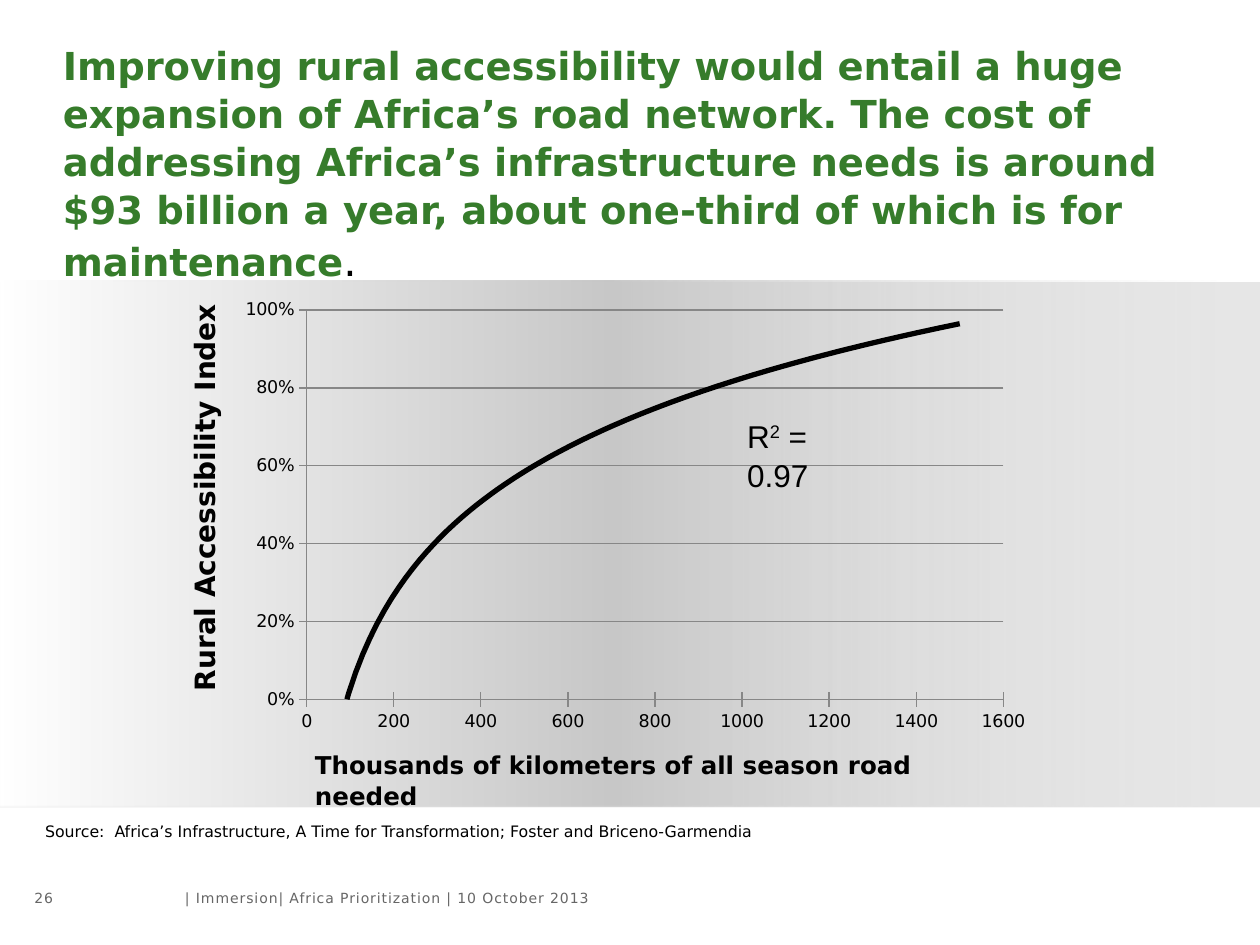
from collections import namedtuple
from dataclasses import dataclass

from lxml import etree
from pptx import Presentation
from pptx.chart.data import XyChartData
from pptx.dml.color import RGBColor
from pptx.enum.chart import XL_CHART_TYPE as ChartType
from pptx.enum.chart import XL_MARKER_STYLE as Marker
from pptx.enum.chart import XL_TICK_MARK as Tick
from pptx.enum.shapes import MSO_SHAPE as Preset
from pptx.enum.text import MSO_ANCHOR as Anchor
from pptx.enum.text import PP_ALIGN as Align
from pptx.oxml import parse_xml
from pptx.oxml.ns import nsdecls, qn
from pptx.util import Cm, Pt

Box = namedtuple("Box", "left top width height")


@dataclass(frozen=True)
class Theme:
    """Colours, fonts and type sizes of the slide."""
    green: str = "367C2B"
    black: str = "000000"
    grey: str = "666666"
    axis: str = "878787"
    band: str = "E6E6E6"
    fade: tuple = (("FFFFFF", 0, 100), ("C7C7C7", 50, 100), ("E4E4E4", 100, 0))
    font: str = "DejaVu Sans"
    formula_font: str = "Arial"
    title: int = 22
    stop: int = 24
    formula: int = 18
    y_title: int = 16
    x_title: int = 14
    ticks: int = 10
    source: int = 9
    footer: int = 8
    leading: float = 1.04


THEME = Theme()


def rgb(code):
    """Turn a hex code into a colour."""
    return RGBColor.from_string(code)


def add_text(slide, box, padded=True, align=Align.LEFT, anchor=Anchor.TOP):
    """Add a wrapping text box and return its shape and first paragraph."""
    shape = slide.shapes.add_textbox(*map(Cm, box))
    frame = shape.text_frame
    frame.word_wrap = True
    frame.vertical_anchor = anchor
    if not padded:
        frame.margin_left = frame.margin_right = 0
        frame.margin_top = frame.margin_bottom = 0
    paragraph = frame.paragraphs[0]
    paragraph.alignment = align
    paragraph.line_spacing = THEME.leading
    return shape, paragraph


def add_run(paragraph, text, size, color=THEME.black, bold=False,
            font=THEME.font, **attributes):
    """Add one styled run, with extra run attributes if given."""
    run = paragraph.add_run()
    run.text = text
    run.font.name = font
    run.font.size = Pt(size)
    run.font.bold = bold
    run.font.color.rgb = rgb(color)
    for key, value in attributes.items():
        run.font._element.set(key, value)


def add_panel(slide, box):
    """Add a plain rectangle without outline or shadow."""
    panel = slide.shapes.add_shape(Preset.RECTANGLE, *map(Cm, box))
    panel.shadow.inherit = False
    panel.line.fill.background()
    return panel


def build_band(slide, box):
    """Draw the grey band and the fade that lies over it."""
    base = add_panel(slide, box)
    base.fill.solid()
    base.fill.fore_color.rgb = rgb(THEME.band)
    fade = add_panel(slide, Box(box.left, box.top - 0.03, 24.61, box.height))
    fade.fill.gradient()
    fade.fill.gradient_angle = 0
    stops = fade._element.spPr.find(qn("a:gradFill")).find(qn("a:gsLst"))
    for stop in list(stops):
        stops.remove(stop)
    for color, position, opacity in THEME.fade:
        stop = etree.SubElement(stops, qn("a:gs"), pos=str(position * 1000))
        tint = etree.SubElement(stop, qn("a:srgbClr"), val=color)
        etree.SubElement(tint, qn("a:alpha"), val=str(opacity * 1000))


def build_title(slide, box):
    """Write the headline."""
    _, headline = add_text(slide, box, padded=False)
    add_run(headline, "Improving rural accessibility would entail a huge expansion "
            "of Africa’s road network. The cost of addressing Africa’s "
            "infrastructure needs is around $93 billion a year, about one-third "
            "of which is for maintenance", THEME.title, THEME.green, True)
    add_run(headline, ".", THEME.stop)


def style_axis(axis, top, step, number_format):
    """Set the scale, ticks and line of one axis."""
    axis.minimum_scale, axis.maximum_scale, axis.major_unit = 0, top, step
    axis.major_tick_mark, axis.minor_tick_mark = Tick.CROSS, Tick.NONE
    axis.tick_labels.number_format = number_format
    axis.tick_labels.number_format_is_linked = False
    axis.format.line.color.rgb = rgb(THEME.axis)


def add_log_trend(series):
    """Give a series a logarithmic trend line."""
    series._element.find(qn("c:xVal")).addprevious(parse_xml(
        f'<c:trendline {nsdecls("c", "a")}><c:spPr><a:ln w="38100"><a:solidFill>'
        f'<a:srgbClr val="{THEME.black}"/></a:solidFill></a:ln></c:spPr>'
        '<c:trendlineType val="log"/><c:dispRSqr val="0"/>'
        '<c:dispEq val="0"/></c:trendline>'))


def fix_plot_area(chart, **fractions):
    """Fix the inner plot area as fractions of the chart."""
    area = chart._chartSpace.chart.plotArea
    for old in area.findall(qn("c:layout")):
        area.remove(old)
    places = "".join(f'<c:{key} val="{value}"/>' for key, value in fractions.items())
    area.insert(0, parse_xml(
        f'<c:layout {nsdecls("c")}><c:manualLayout><c:layoutTarget val="inner"/>'
        f'<c:xMode val="edge"/><c:yMode val="edge"/>{places}'
        '</c:manualLayout></c:layout>'))


def build_chart(slide, box):
    """Draw the access curve with its axis titles and fit label."""
    data = XyChartData()
    points = data.add_series("Series 1")
    for roads, access in ((80, 0.05), (220, 0.2), (380, 0.42), (400, 0.5),
                          (850, 0.75), (1100, 0.92), (1500, 1)):
        points.add_data_point(roads, access)
    chart = slide.shapes.add_chart(
        ChartType.XY_SCATTER, *map(Cm, box), data).chart
    chart.has_legend = chart.has_title = False
    chart.font.name, chart.font.size = THEME.font, Pt(THEME.ticks)
    chart.font.color.rgb = rgb(THEME.black)
    chart.plots[0].vary_by_categories = False
    style_axis(chart.category_axis, 1600, 200, "0")
    style_axis(chart.value_axis, 1, 0.2, "0%")
    chart.category_axis.has_major_gridlines = False
    chart.value_axis.major_gridlines.format.line.color.rgb = rgb(THEME.axis)
    fix_plot_area(chart, x=0.1, y=0.04, w=0.86, h=0.87)

    curve = chart.plots[0].series[0]
    curve.smooth = False
    curve.marker.style = Marker.NONE
    curve.format.line.fill.background()
    add_log_trend(curve)

    _, fit = add_text(slide, Box(box.left + 10.26, box.top + 2.36, 2.82, 1.02))
    for text, baseline in (("R", "0"), ("2", "30000"), (" = 0.97", "0")):
        add_run(fit, text, THEME.formula, font=THEME.formula_font, baseline=baseline)
    y_shape, y_title = add_text(
        slide, Box(box.left - 4.7, box.top + 3.58, 8.48, 0.94))
    y_shape.rotation = 270
    add_run(y_title, "Rural Accessibility Index", THEME.y_title, bold=True)
    _, x_title = add_text(slide, Box(box.left + 1.55, box.top + 9.09, 14.73, 0.86))
    add_run(x_title, "Thousands of kilometers of all season road needed",
            THEME.x_title, bold=True)


def build_source(slide, box):
    """Write the source line."""
    _, source = add_text(slide, box)
    add_run(source, "Source:  Africa’s Infrastructure, A Time for Transformation; "
            "Foster and Briceno-Garmendia", THEME.source)


def build_footer(slide, box):
    """Write the page number and the event line."""
    for text, left, width, align in (
            ("26", 0, 0.94, Align.RIGHT),
            ("| Immersion| Africa Prioritization | 10 October 2013",
             3.6, box.width - 3.6, Align.LEFT)):
        _, line = add_text(slide, Box(box.left + left, box.top, width, box.height),
                           False, align, Anchor.MIDDLE)
        add_run(line, text, THEME.footer, THEME.grey, spc="50")


def main():
    """Build and save the slide."""
    deck = Presentation()
    deck.slide_width, deck.slide_height = Cm(25.4), Cm(19.05)
    slide = deck.slides.add_slide(deck.slide_layouts[6])
    build_footer(slide, Box(0.13, 17.71, 17.57, 0.76))
    build_band(slide, Box(0, 5.69, 25.4, 10.59))
    build_chart(slide, Box(4.55, 5.89, 16.33, 9.02))
    build_title(slide, Box(1.27, 0.81, 23.6, 3.18))
    build_source(slide, Box(0.66, 16.43, 15.42, 0.64))
    deck.save("out.pptx")


if __name__ == "__main__":
    main()
